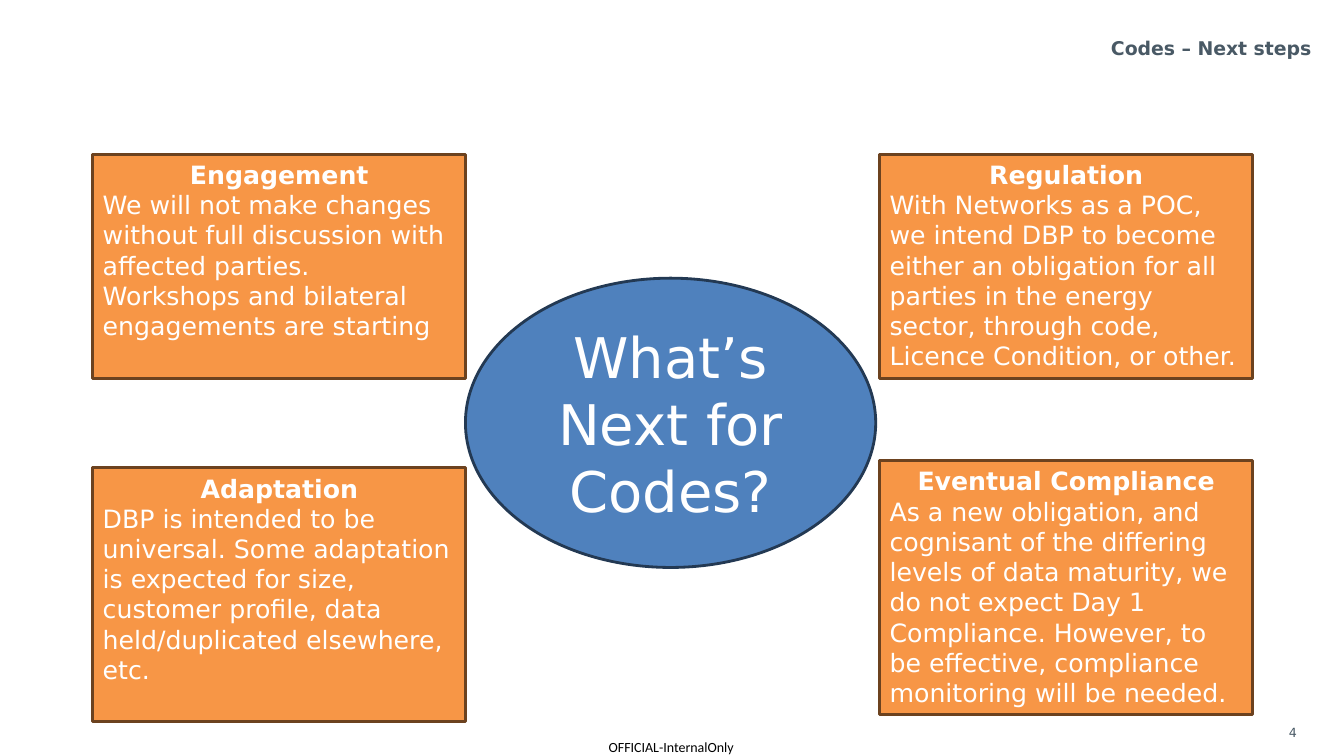
"""Build the "Codes – Next steps" slide: four cards around a central question."""
from pptx import Presentation
from pptx import util as u
from pptx.dml import color
from pptx.enum import shapes, text

SANS = "DejaVu Sans"
LEFT, RIGHT, WIDE = 2.34, 22.17, 9.4
CARDS = [
    (LEFT, 3.89, 5.64, "Engagement", [
        "We will not make changes without full discussion with affected parties.",
        "Workshops and bilateral engagements are starting"]),
    (LEFT, 11.79, 6.4, "Adaptation", [
        "DBP is intended to be universal. Some adaptation is expected for size, "
        "customer profile, data held/duplicated elsewhere, etc."]),
    (RIGHT, 3.89, 5.64, "Regulation", [
        "With Networks as a POC, we intend DBP to become either an obligation for all "
        "parties in the energy sector, through code, Licence Condition, or other."]),
    (RIGHT, 11.61, 6.4, "Eventual Compliance", [
        "As a new obligation, and cognisant of the differing levels of data maturity, "
        "we do not expect Day 1 Compliance. However, to be effective, compliance "
        "monitoring will be needed."]),
]
HUB = ((11.73, 7.01, 10.34, 7.29), "What’s Next for Codes?")
LABELS = [
    ((11.07, 0.79, 22.23, 0.79), "Codes – Next steps", "RIGHT", 13.5, True, SANS, "495965", True),
    ((32.23, 18.14, 1.4, 0.74), "4", "LEFT", 9, False, SANS, "495965", True),
    ((15.34, 18.62, 3.25, 0.43), "OFFICIAL-InternalOnly", "LEFT", 10, False, "Calibri", "000000", False),
]


def paint(part, shade):
    part.rgb = color.RGBColor.from_string(shade)


def write(shape, lines, anchor="TOP", size=18, name=SANS, shade="FFFFFF"):
    frame = shape.text_frame
    frame.word_wrap = True
    frame.vertical_anchor = getattr(text.MSO_ANCHOR, anchor)
    for n, (words, align, bold) in enumerate(lines):
        para = frame.add_paragraph() if n else frame.paragraphs[0]
        para.alignment = getattr(text.PP_ALIGN, align)
        run = para.add_run()
        run.text = words
        for key, value in {"size": u.Pt(size), "name": name, "bold": bold}.items():
            setattr(run.font, key, value)
        paint(run.font.color, shade)


def draw(slide, kind, box, fill, edge):
    shape = slide.shapes.add_shape(kind, *map(u.Cm, box))
    shape.shadow.inherit = False
    shape.fill.solid()
    paint(shape.fill.fore_color, fill)
    paint(shape.line.color, edge)
    shape.line.width = u.Pt(2)
    return shape


def main():
    deck = Presentation()
    deck.slide_width, deck.slide_height = u.Cm(33.87), u.Cm(19.05)
    slide = deck.slides.add_slide(deck.slide_layouts[6])

    for box, words, align, size, bold, name, shade, inset in LABELS:
        label = slide.shapes.add_textbox(*map(u.Cm, box))
        if not inset:
            for side in ("left", "top", "right", "bottom"):
                setattr(label.text_frame, "margin_" + side, 0)
        write(label, [(words, align, bold)], size=size, name=name, shade=shade)

    for left, top, high, head, body in CARDS:
        card = draw(slide, shapes.MSO_SHAPE.RECTANGLE, (left, top, WIDE, high), "F79646", "6C421F")
        write(card, [(head, "CENTER", True)] + [(line, "LEFT", False) for line in body])

    box, words = HUB
    hub = draw(slide, shapes.MSO_SHAPE.OVAL, box, "4F81BD", "233953")
    write(hub, [(words, "CENTER", False)], anchor="MIDDLE", size=40)
    deck.save("out.pptx")


if __name__ == "__main__":
    main()
